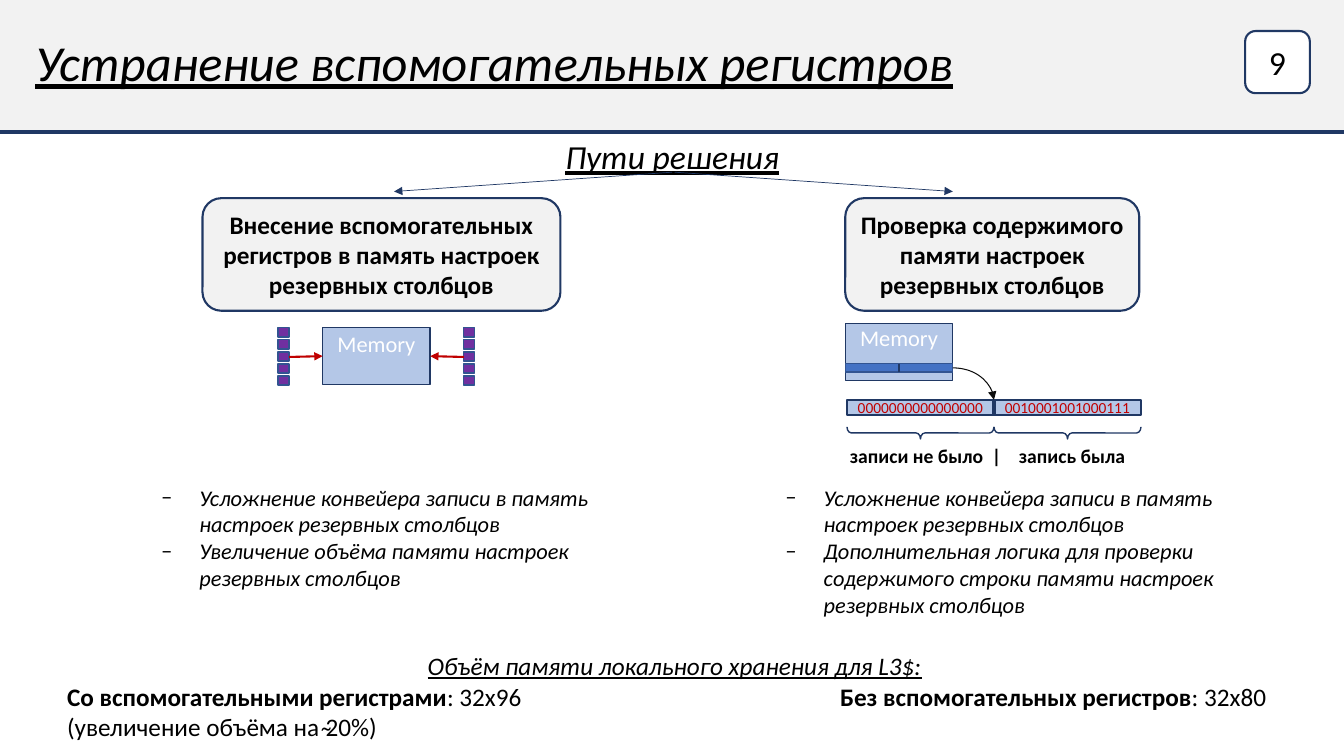
from lxml import etree
from pptx import Presentation
from pptx.dml.color import RGBColor
from pptx.enum.shapes import MSO_CONNECTOR, MSO_SHAPE
from pptx.enum.text import MSO_ANCHOR, MSO_AUTO_SIZE, PP_ALIGN
from pptx.oxml.ns import qn
from pptx.util import Inches, Pt

RECT, ROUND, BRACE = MSO_SHAPE.RECTANGLE, MSO_SHAPE.ROUNDED_RECTANGLE, MSO_SHAPE.RIGHT_BRACE
STRAIGHT, CURVE = MSO_CONNECTOR.STRAIGHT, MSO_CONNECTOR.CURVE
LEFT, CENTER = PP_ALIGN.LEFT, PP_ALIGN.CENTER
TOP, MIDDLE = MSO_ANCHOR.TOP, MSO_ANCHOR.MIDDLE

NAVY = RGBColor(0x20, 0x38, 0x64)
BLUE_EDGE = RGBColor(0x32, 0x54, 0x91)
BLUE = RGBColor(0x44, 0x72, 0xC4)
PALE_BLUE = RGBColor(0xB4, 0xC7, 0xE7)
PURPLE = RGBColor(0x70, 0x30, 0xA0)
RED = RGBColor(0xC0, 0x00, 0x00)
GRAY = RGBColor(0xF2, 0xF2, 0xF2)
WHITE = RGBColor(0xFF, 0xFF, 0xFF)
BLACK = RGBColor(0x00, 0x00, 0x00)
INK = RGBColor(0x0D, 0x0D, 0x0D)

prs = Presentation()
prs.slide_width, prs.slide_height = Inches(13.33), Inches(7.5)
U = prs.slide_height / 90  # square grid: 160 columns by 90 rows
s = prs.slides.add_slide(prs.slide_layouts[5])


def put(kind, x, y, w, h, fill=None, line=None, width=1.0):
    """Place a preset shape, or a text box when kind is None, in grid units."""
    box = [round(v * U) for v in (x, y, w, h)]
    if kind is None:
        return s.shapes.add_textbox(*box)
    sp = s.shapes.add_shape(kind, *box)
    sp.shadow.inherit = False
    if fill is None:
        sp.fill.background()
    else:
        sp.fill.solid()
        sp.fill.fore_color.rgb = fill
    sp.line.color.rgb = line
    sp.line.width = Pt(width)
    return sp


def write(sp, *paragraphs, size=18, color=BLACK, bold=False, italic=False, underline=False,
          align=CENTER, anchor=MIDDLE, inset=None, bullet=None):
    """Fill a shape; a paragraph is a string or a list of (text, bold) runs."""
    tf = sp.text_frame
    tf.word_wrap, tf.auto_size, tf.vertical_anchor = True, MSO_AUTO_SIZE.NONE, anchor
    if inset is not None:
        tf.margin_left = tf.margin_right = tf.margin_top = tf.margin_bottom = Pt(inset)
    for i, runs in enumerate(paragraphs):
        p = tf.paragraphs[0] if i == 0 else tf.add_paragraph()
        p.alignment = align
        if bullet:
            pPr = p._p.get_or_add_pPr()
            pPr.set("marL", str(Inches(0.38)))
            pPr.set("indent", str(-Inches(0.38)))
            etree.SubElement(pPr, qn("a:buFont")).set("typeface", "Calibri")
            etree.SubElement(pPr, qn("a:buChar")).set("char", bullet)
        for text, strong in [(runs, bold)] if isinstance(runs, str) else runs:
            r = p.add_run()
            r.text = text
            f = r.font
            f.name, f.size, f.color.rgb = "Calibri", Pt(size), color
            f.bold, f.italic, f.underline = strong, italic, underline


# Header
band = put(RECT, -1, -1, 162.4, 16.7, GRAY, NAVY, 3)
s.shapes.element.insert(2, band.element)
title = s.shapes.title
title.left, title.top, title.width, title.height = [round(v * U) for v in (3, 3.1, 138.2, 8.5)]
write(title, "Устранение вспомогательных регистров", size=36, italic=True, underline=True, align=LEFT)
write(put(ROUND, 148.2, 3.7, 7.7, 7.4, WHITE, NAVY, 1.5), "9", size=24)
write(put(None, 0, 15.6, 160, 6), "Пути решения", size=24, italic=True, underline=True)

# Two solutions: box and drawbacks
solutions = [
    (24.1, 42.6, "Внесение вспомогательных регистров в память настроек резервных столбцов",
     18, "Увеличение объёма памяти настроек резервных столбцов"),
    (100.6, 35, "Проверка содержимого памяти настроек резервных столбцов",
     92.3, "Дополнительная логика для проверки содержимого строки памяти настроек резервных столбцов"),
]
for x, w, name, list_x, drawback in solutions:
    write(put(ROUND, x, 23.6, w, 13.4, GRAY, NAVY, 1.5), name, bold=True)
    write(put(None, list_x, 57, 57.6, 17),
          "Усложнение конвейера записи в память настроек резервных столбцов", drawback,
          size=16, italic=True, align=LEFT, anchor=TOP, bullet="‒")

# Memory blocks
for x, y, inset in [(38.4, 39, 2), (100.6, 38.5, 0.5)]:
    write(put(RECT, x, y, 12.8, 6.8, PALE_BLUE, NAVY), "Memory",
          size=16, color=WHITE, anchor=TOP, inset=inset)

# Auxiliary registers on both sides of the left memory
for x in (33.1, 55.2):
    for row in range(5):
        put(RECT, x, 39 + 1.44 * row, 1.3, 1.1, PURPLE, BLUE_EDGE)

# Memory row and its contents
put(RECT, 100.6, 43.3, 12.8, 1, BLUE, BLUE_EDGE)
HALF = 17.5
for i, bits in enumerate(["0000000000000000", "0010001001000111"]):
    x = 100.8 + HALF * i
    write(put(RECT, x, 47.6, HALF, 1.8, PALE_BLUE, NAVY), bits, size=11, color=RED, inset=0)
    brace = put(BRACE, x + HALF / 2 - 0.72, 51.54 - HALF / 2, 1.44, HALF, None, NAVY)
    brace.rotation = 90
    brace.adjustments[0] = 0.365
for center, label in [(109.1, "записи не было"), (118.6, "|"), (127.6, "запись была")]:
    write(put(None, center - 9, 52.2, 18, 4), label, size=14, bold=True, inset=0)

# Lines and arrows
connectors = [
    (STRAIGHT, 80, 20.5, 46.9, 22.8, NAVY, 0.5, True),
    (STRAIGHT, 80.3, 20.5, 113.4, 22.8, NAVY, 0.5, True),
    (STRAIGHT, 34.4, 42.5, 38.4, 42.4, RED, 1.5, True),
    (STRAIGHT, 55.2, 42.5, 51.2, 42.4, RED, 1.5, True),
    (STRAIGHT, 107, 43.3, 107, 44.3, NAVY, 1, False),
    (STRAIGHT, 118.3, 47.6, 118.3, 49.4, NAVY, 2.25, False),
    (CURVE, 113.4, 43.8, 118.3, 47.6, INK, 0.75, True),
]
for kind, x1, y1, x2, y2, color, width, arrow in connectors:
    c = s.shapes.add_connector(kind, *[round(v * U) for v in (x1, y1, x2, y2)])
    c.line.color.rgb, c.line.width = color, Pt(width)
    spPr = c.element.spPr
    if arrow:
        etree.SubElement(spPr.find(qn("a:ln")), qn("a:tailEnd")).set("type", "triangle")
    if kind == CURVE:
        spPr.find(qn("a:prstGeom")).set("prst", "curvedConnector2")
    etree.SubElement(spPr, qn("a:effectLst"))

# Memory size comparison
write(put(None, 6.8, 76.8, 147, 3.7), "Объём памяти локального хранения для L3$:",
      italic=True, underline=True, anchor=TOP)
write(put(None, 6.8, 80.5, 63, 7.4),
      [("Со вспомогательными регистрами", True), (": 32x96", False)],
      "(увеличение объёма на ̴20%)", align=LEFT, anchor=TOP)
write(put(None, 98.8, 80.5, 58, 3.7),
      [("Без вспомогательных регистров", True), (": 32x80", False)], align=LEFT, anchor=TOP)

prs.save("out.pptx")
